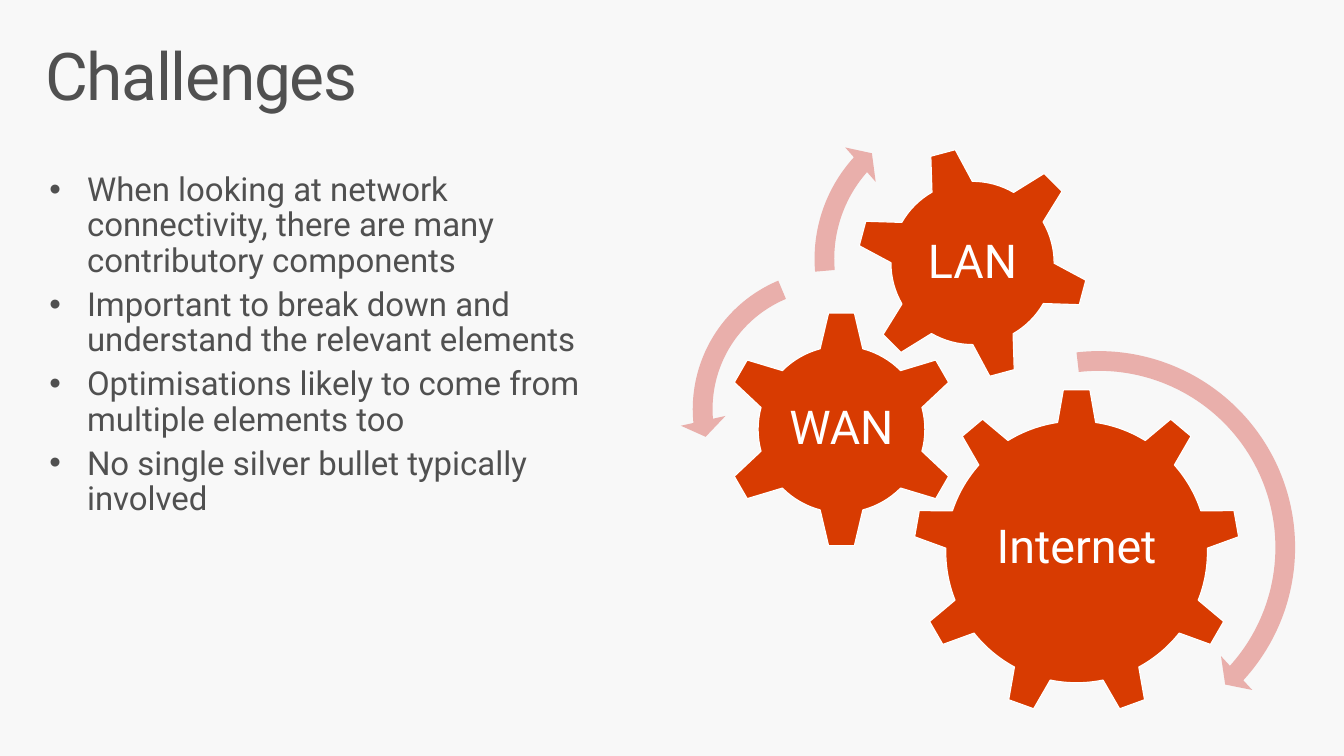
from lxml.etree import SubElement
from pptx import Presentation
from pptx.dml.color import RGBColor
from pptx.enum.shapes import MSO_SHAPE as Preset
from pptx.enum.text import MSO_ANCHOR as Anchor, MSO_AUTO_SIZE as AutoSize, PP_ALIGN as Align
from pptx.oxml.ns import qn
from pptx.util import Pt

BACKGROUND = RGBColor(0xF8, 0xF8, 0xF8)
GREY = RGBColor(0x50, 0x50, 0x50)
ORANGE = RGBColor(0xD8, 0x3B, 0x01)
PINK = RGBColor(0xE9, 0xAF, 0xAB)
WHITE = RGBColor(0xFF, 0xFF, 0xFF)

BULLETS = [
    "When looking at network connectivity, there are many contributory components",
    "Important to break down and understand the relevant elements",
    "Optimisations likely to come from multiple elements too",
    "No single silver bullet typically involved",
]

# Label, preset, centre x, centre y, diameter, rotation, label width, label rise
GEARS = [
    ("Internet", Preset.GEAR_9, 784.4, 402.1, 238.3, 0, 142.6, 2.5),
    ("WAN", Preset.GEAR_6, 613.1, 312.8, 173.5, 0, 86.4, 0),
    ("LAN", Preset.GEAR_6, 708.6, 191.6, 169.9, 345, 95.8, 0),
]

# Preset, centre x, centre y, size, shaft %, head %, angles of head, end and start
ARROWS = [
    (Preset.CIRCULAR_ARROW, 800.6, 398.9, 305.3, 4.7, 5.5, (4.98, 42.34, 263.49)),
    (Preset.LEFT_CIRCULAR_ARROW, 606.2, 298.1, 221.8, 6.5, 7.5, (7.17, 174.82, 247.3)),
    (Preset.CIRCULAR_ARROW, 703.4, 188.6, 239, 6, 7, (6.57, 221.9, 175.14)),
]
ADJUSTMENT_PER_DEGREE = 0.6


def apply(target, values):
    for name, value in values.items():
        setattr(target, name, value)


def centred_box(x, y, width, height):
    return x - width / 2, y - height / 2, width, height


class SlideBuilder:
    font_name = "Roboto"

    def __init__(self, presentation):
        self.slide = presentation.slides.add_slide(presentation.slide_layouts[1])
        fill = self.slide.background.fill
        fill.solid()
        fill.fore_color.rgb = BACKGROUND

    def set_text(self, shape, lines, size, color, inset, anchor=Anchor.TOP,
                 align=Align.LEFT, space_after=0):
        """Fill a text frame and return its paragraphs."""
        frame = shape.text_frame
        frame.text = "\n".join(lines)
        apply(frame, {
            "word_wrap": True, "auto_size": AutoSize.NONE, "vertical_anchor": anchor,
            "margin_left": Pt(inset[0]), "margin_right": Pt(inset[0]),
            "margin_top": Pt(inset[1]), "margin_bottom": Pt(inset[1]),
        })
        for paragraph in frame.paragraphs:
            apply(paragraph, {
                "alignment": align, "line_spacing": 0.9,
                "space_before": Pt(0), "space_after": Pt(space_after),
            })
            font = paragraph.runs[0].font
            apply(font, {"name": self.font_name, "size": Pt(size)})
            font.color.rgb = color
        return frame.paragraphs

    def place(self, shape, box):
        apply(shape, dict(zip(("left", "top", "width", "height"), map(Pt, box))))

    def title(self, text, box):
        shape = self.slide.shapes.title
        self.place(shape, box)
        paragraph = self.set_text(shape, [text], 48, GREY, (11.5, 7.2))[0]
        paragraph.runs[0]._r.get_or_add_rPr().set("spc", "-100")

    def bullets(self, lines, box, indent):
        shape = self.slide.placeholders[1]
        self.place(shape, box)
        for paragraph in self.set_text(shape, lines, 24, GREY, (14.4, 11.5), space_after=6):
            properties = paragraph._p.get_or_add_pPr()
            properties.set("marL", str(Pt(indent)))
            properties.set("indent", str(-Pt(indent)))
            SubElement(properties, qn("a:buFont")).set("typeface", "Arial")
            SubElement(properties, qn("a:buChar")).set("char", "•")

    def shape(self, preset, box, color):
        shape = self.slide.shapes.add_shape(preset, *map(Pt, box))
        shape.shadow.inherit = False
        shape.fill.solid()
        shape.fill.fore_color.rgb = color
        shape.line.fill.background()
        return shape

    def gear(self, label, preset, x, y, diameter, rotation, label_width, label_rise):
        gear = self.shape(preset, centred_box(x, y, diameter, diameter), ORANGE)
        gear.rotation = rotation
        gear.line.color.rgb = WHITE
        gear.line.width = Pt(0.85)
        # The label stays level when the gear is turned
        box = centred_box(x, y - label_rise, label_width, label_width)
        text_box = self.slide.shapes.add_textbox(*map(Pt, box))
        self.set_text(text_box, [label], 34, WHITE, (3.6, 3.6), Anchor.MIDDLE, Align.CENTER)

    def arrow(self, preset, x, y, size, shaft, head, angles):
        arrow = self.shape(preset, centred_box(x, y, size, size), PINK)
        turns = [angle * ADJUSTMENT_PER_DEGREE for angle in angles]
        for index, value in enumerate([shaft / 100, *turns, head / 100]):
            arrow.adjustments[index] = value


def main():
    presentation = Presentation()
    apply(presentation, {"slide_width": Pt(979.2), "slide_height": Pt(550.8)})
    builder = SlideBuilder(presentation)

    # Title and list
    builder.title("Challenges", (21.6, 24.5, 936, 72))
    builder.bullets(BULLETS, (21.6, 114.5, 423.4, 277.2), 27.4)

    # Gears with their labels, then the turning arrows
    for gear in GEARS:
        builder.gear(*gear)
    for arrow in ARROWS:
        builder.arrow(*arrow)

    presentation.save("out.pptx")


if __name__ == "__main__":
    main()
